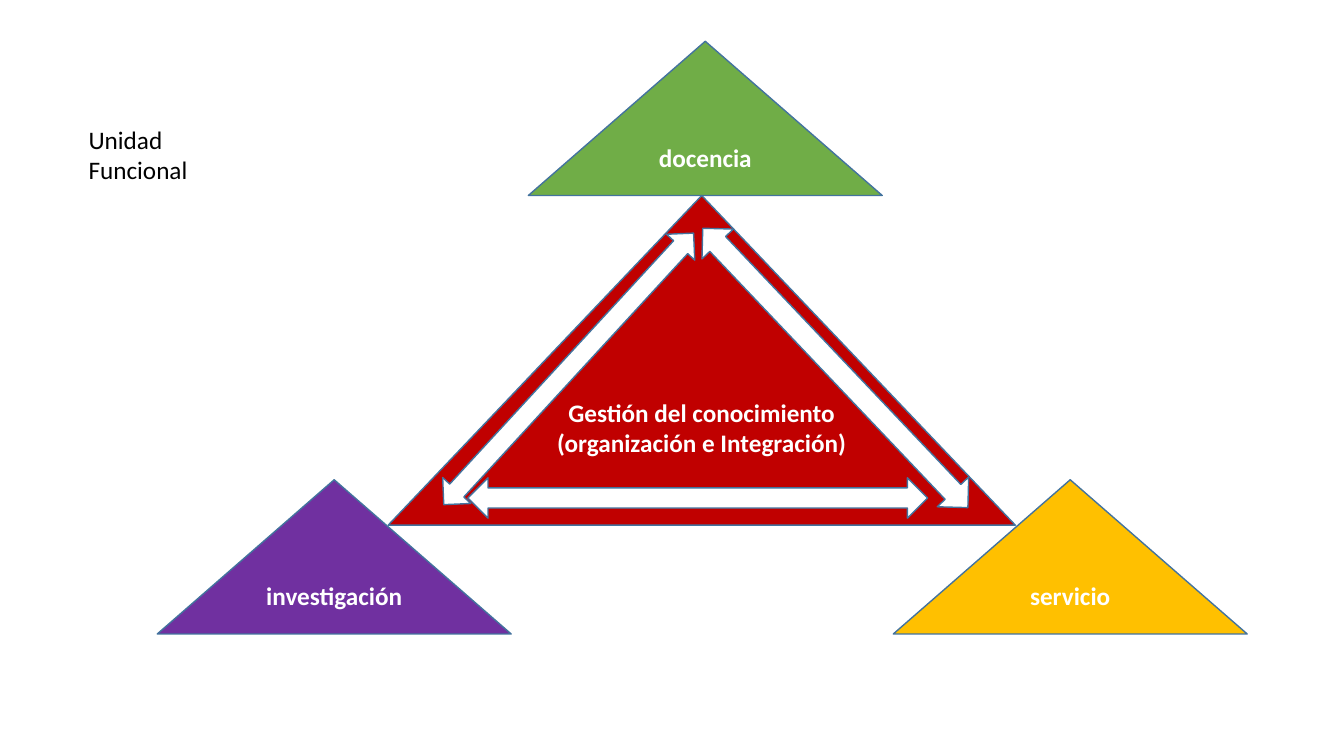
"""Build the slide on knowledge management as a triangle of three functions."""
from pptx import Presentation
from pptx.dml.color import RGBColor
from pptx.enum.shapes import MSO_SHAPE
from pptx.enum.text import MSO_ANCHOR, PP_ALIGN
from pptx.util import Inches, Pt

PEAK = MSO_SHAPE.ISOSCELES_TRIANGLE
ARROW = MSO_SHAPE.UP_DOWN_ARROW
MIDDLE = MSO_ANCHOR.MIDDLE
CENTER = PP_ALIGN.CENTER

COLORS = {"green": "70AD47", "gold": "FFC000", "purple": "7030A0", "red": "C00000",
          "white": "FFFFFF", "black": "000000", "edge": "43739E"}
SIZE = (3.51, 1.53)
ROLES = [("docencia", "green", 5.24, 0.41),
         ("servicio", "gold", 8.86, 4.76),
         ("investigación", "purple", 1.56, 4.76)]
CORE = ["Gestión del conocimiento", "(organización e Integración)"]
CORE_BOX = (3.85, 1.94, 6.22, 3.27)
ARROWS = [((6.72, 2.66, 0.4, 4.56), 270),
          ((8.07, 1.74, 0.43, 3.82), 316.5),
          ((5.45, 1.83, 0.38, 3.66), 42.6)]
TITLE = "Unidad Funcional"
TITLE_BOX = (0.78, 1.18, 1.75, 0.71)
FONT = {"name": "Calibri", "size": Pt(18)}


def color(name):
    return RGBColor.from_string(COLORS[name])


def write(frame, lines, tint, bold=False, align=None):
    frame.word_wrap = True
    for i, line in enumerate(lines):
        para = frame.add_paragraph() if i else frame.paragraphs[0]
        para.alignment = align
        run = para.add_run()
        run.text = line
        for key, value in {**FONT, "bold": bold}.items():
            setattr(run.font, key, value)
        run.font.color.rgb = color(tint)


def draw(slide, kind, box, fill, lines=(), turn=0):
    shape = slide.shapes.add_shape(kind, *map(Inches, box))
    shape.shadow.inherit = False
    shape.rotation = turn
    shape.fill.solid()
    shape.fill.fore_color.rgb = color(fill)
    shape.line.color.rgb = color("edge")
    shape.line.width = Pt(1)
    shape.text_frame.vertical_anchor = MIDDLE
    write(shape.text_frame, lines, "white", True, CENTER)
    return shape


def main():
    deck = Presentation()
    deck.slide_width, deck.slide_height = Inches(13.33), Inches(7.5)
    slide = deck.slides.add_slide(deck.slide_layouts[6])
    for name, fill, left, top in ROLES:
        draw(slide, PEAK, (left, top, *SIZE), fill, [name])
    core = draw(slide, PEAK, CORE_BOX, "red", CORE)
    core.text_frame.margin_bottom = Inches(0.35)
    for box, turn in ARROWS:
        draw(slide, ARROW, box, "white", turn=turn)
    title = slide.shapes.add_textbox(*map(Inches, TITLE_BOX))
    write(title.text_frame, [TITLE], "black")
    deck.save("out.pptx")


if __name__ == "__main__":
    main()
